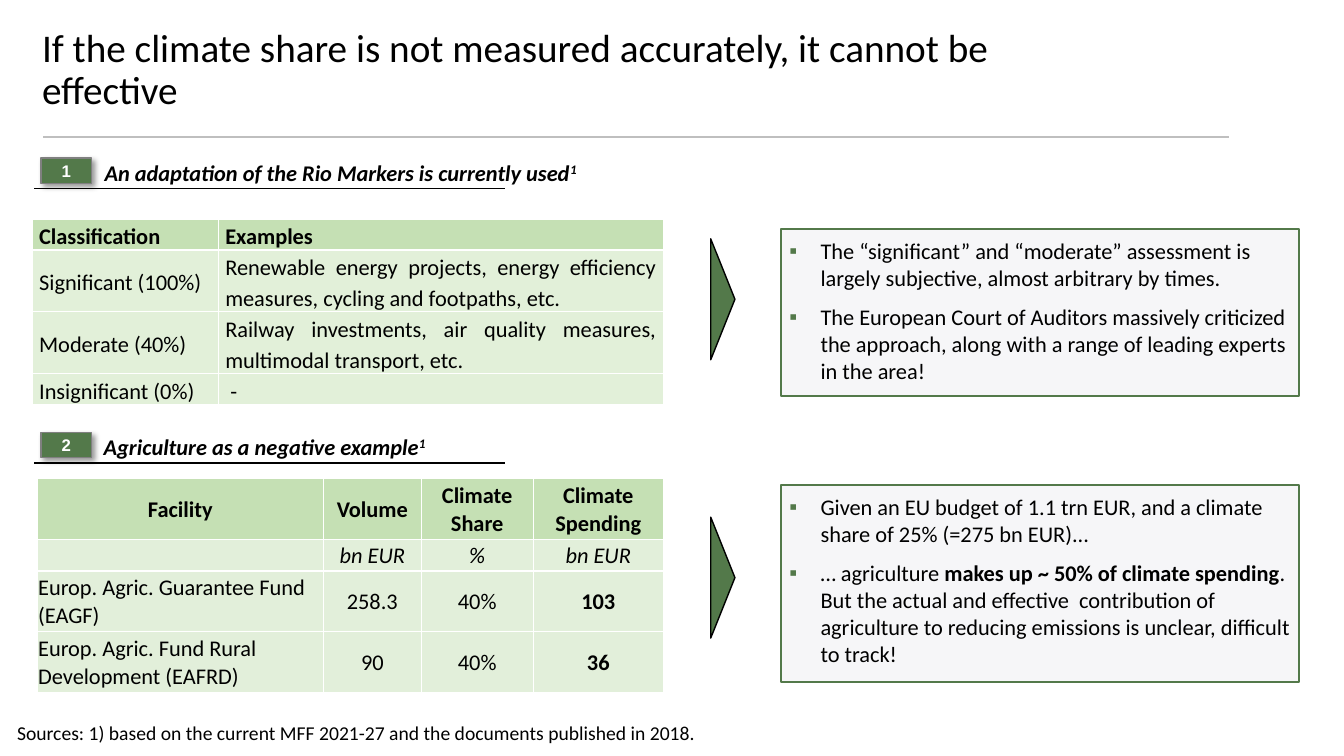
from lxml import etree
from pptx import Presentation
from pptx import util as u
from pptx.dml.color import RGBColor
from pptx.enum import shapes, text
from pptx.oxml import parse_xml
from pptx.oxml.ns import nsdecls, qn

Pt = u.Pt
ALIGN = text.PP_ALIGN
ANCHOR = text.MSO_ANCHOR
COLOURS = {
    "ink": "000000", "paper": "FFFFFF", "rule": "BFBFBF", "badge_edge": "808080",
    "green": "53794A", "panel": "F6F6F8", "header": "C5E0B4",
    "marker_row": "E2F0D9", "fund_row": "E2EFDA",
}


def rgb(name):
    return RGBColor.from_string(COLOURS[name])


def add_bullet(paragraph):
    properties = paragraph._p.get_or_add_pPr()
    properties.set("marL", str(Pt(22.3)))
    properties.set("indent", str(-Pt(22.3)))
    colour = etree.SubElement(properties, qn("a:buClr"))
    etree.SubElement(colour, qn("a:srgbClr"), val=COLOURS["green"])
    etree.SubElement(properties, qn("a:buFont"), typeface="Arial")
    etree.SubElement(properties, qn("a:buChar"), char="▪")


def write(frame, paragraphs, size=16, font="Calibri", colour="ink", bold=False,
          italic=False, align=ALIGN.LEFT, spacing=None, after=None, bullet=False):
    """Fill a text frame; a paragraph is a list of (text, emphasis) runs,
    where emphasis is "", "bold" or "super"."""
    for index, runs in enumerate(paragraphs):
        paragraph = frame.add_paragraph() if index else frame.paragraphs[0]
        if bullet:
            add_bullet(paragraph)
        paragraph.alignment = align
        if spacing:
            paragraph.line_spacing = spacing
        if after:
            paragraph.space_after = Pt(after)
        for words, emphasis in runs:
            run = paragraph.add_run()
            run.text = words
            run.font.size, run.font.name = Pt(size), font
            run.font.bold = bold or emphasis == "bold"
            run.font.italic = italic
            run.font.color.rgb = rgb(colour)
            if emphasis == "super":
                run.font._element.set("baseline", "30000")


def set_frame(frame, margins, anchor=ANCHOR.TOP, wrap=True):
    frame.word_wrap = wrap
    frame.vertical_anchor = anchor
    (frame.margin_left, frame.margin_top,
     frame.margin_right, frame.margin_bottom) = map(Pt, margins)


def add_text(slide, box, runs, margins=(7.2, 3.6, 7.2, 3.6), anchor=ANCHOR.MIDDLE,
             wrap=True, **style):
    frame = slide.shapes.add_textbox(*map(Pt, box)).text_frame
    set_frame(frame, margins, anchor, wrap)
    write(frame, [runs], **style)


def add_rule(slide, left, right, y, colour):
    rule = slide.shapes.add_connector(
        shapes.MSO_CONNECTOR.STRAIGHT, Pt(left), Pt(y), Pt(right), Pt(y))
    rule.line.color.rgb = rgb(colour)
    rule.line.width = Pt(1)
    etree.SubElement(rule._element.spPr, qn("a:effectLst"))


def add_block(slide, kind, box, fill, edge, edge_width=1):
    block = slide.shapes.add_shape(kind, *map(Pt, box))
    block.shadow.inherit = False
    block.fill.solid()
    block.fill.fore_color.rgb = rgb(fill)
    block.line.color.rgb = rgb(edge)
    block.line.width = Pt(edge_width)
    return block


def add_heading(slide, number, heading, top, width):
    """Numbered badge, heading with footnote mark, and underline."""
    add_text(slide, (64.8, top, width, 26.6), [(heading, ""), ("1", "super")],
             anchor=ANCHOR.TOP, wrap=False, bold=True, italic=True, align=ALIGN.CENTER)
    add_rule(slide, 24.5, 361, top + 24.6, "ink")
    badge = add_block(slide, shapes.MSO_SHAPE.RECTANGLE, (29.3, top + 3, 36, 18),
                      "green", "badge_edge")
    effects = badge._element.spPr.find(qn("a:effectLst"))
    effects.append(parse_xml(
        f'<a:outerShdw {nsdecls("a")} blurRad="{Pt(4)}" dist="{Pt(3)}" dir="2700000" '
        f'algn="tl" rotWithShape="0"><a:srgbClr val="{COLOURS["ink"]}">'
        '<a:alpha val="40000"/></a:srgbClr></a:outerShdw>'))
    set_frame(badge.text_frame, (0, 0, 0, 0), ANCHOR.MIDDLE)
    write(badge.text_frame, [[(number, "")]], size=12, font="Arial", colour="paper",
          bold=True, align=ALIGN.CENTER)


def add_pointer(slide, middle):
    length, depth = 86.4, 17.3
    box = (516.3 - length / 2, middle - depth / 2, length, depth)
    add_block(slide, shapes.MSO_SHAPE.ISOSCELES_TRIANGLE, box, "green", "ink").rotation = 90


def add_findings(slide, top, height, findings):
    panel = add_block(slide, shapes.MSO_SHAPE.RECTANGLE, (558, top, 370, height),
                      "panel", "green", 1.5)
    set_frame(panel.text_frame, (5.8,) * 4)
    write(panel.text_frame, findings, after=9, bullet=True)


def add_grid(slide, left, top, widths, heights, rows, row_fill, margins, style_of):
    """Table with a header row; style_of(row, column) gives a cell's text format."""
    table = slide.shapes.add_table(
        len(rows), len(widths), Pt(left), Pt(top), Pt(sum(widths)), Pt(sum(heights))).table
    for column, width in zip(table.columns, widths):
        column.width = Pt(width)
    for r, (row, height) in enumerate(zip(rows, heights)):
        table.rows[r].height = Pt(height)
        for c, words in enumerate(row):
            cell = table.cell(r, c)
            cell.fill.solid()
            cell.fill.fore_color.rgb = rgb(row_fill if r else "header")
            cell.vertical_anchor = ANCHOR.MIDDLE
            (cell.margin_left, cell.margin_top,
             cell.margin_right, cell.margin_bottom) = map(Pt, margins)
            write(cell.text_frame, [[(words, "")]], **style_of(r, c))


def marker_style(row, column):
    return {"bold": row == 0, "align": ALIGN.JUSTIFY, "spacing": 1.15}


def fund_style(row, column):
    is_name = row > 1 and column == 0
    return {"bold": row == 0 or (row > 1 and column == 3), "italic": row == 1,
            "align": ALIGN.LEFT if is_name else ALIGN.CENTER}


def main():
    deck = Presentation()
    deck.slide_width, deck.slide_height = Pt(960), Pt(540)
    slide = deck.slides.add_slide(deck.slide_layouts[6])

    add_rule(slide, 31, 877.7, 98, "rule")
    add_text(slide, (23, 10.8, 751, 79.2),
             [("If the climate share is not measured accurately, it cannot be effective", "")],
             size=28, spacing=0.9)

    add_heading(slide, "1", "An adaptation of the Rio Markers is currently used", 110, 357)
    markers = [
        ("Classification", "Examples"),
        ("Significant (100%)", "Renewable energy projects, energy efficiency measures, "
                               "cycling and footpaths, etc."),
        ("Moderate (40%)", "Railway investments, air quality measures, "
                           "multimodal transport, etc."),
        ("Insignificant (0%)", " -"),
    ]
    add_grid(slide, 23, 156.5, (133, 317.8), (22, 44, 44, 22), markers, "marker_row",
             (5, 0, 5, 0), marker_style)
    add_pointer(slide, 213.8)
    add_findings(slide, 163.5, 119.5, [
        [("The “significant” and “moderate” assessment is largely subjective, "
          "almost arbitrary by times.", "")],
        [("The European Court of Auditors massively criticized the approach, along with "
          "a range of leading experts in the area!", "")],
    ])

    add_heading(slide, "2", "Agriculture as a negative example", 306, 248.4)
    add_pointer(slide, 412.6)
    add_findings(slide, 346.3, 141.1, [
        [("Given an EU budget of 1.1 trn EUR, and a climate share of 25% "
          "(=275 bn EUR)...", "")],
        [("… agriculture ", ""), ("makes up ~ 50% of climate spending", "bold"),
         (". But the actual and effective  contribution of agriculture to reducing "
          "emissions is unclear, difficult to track!", "")],
    ])
    funds = [
        ("Facility", "Volume", "Climate Share", "Climate Spending"),
        ("", "bn EUR", "%", "bn EUR"),
        ("Europ. Agric. Guarantee Fund (EAGF)", "258.3", "40%", "103"),
        ("Europ. Agric. Fund Rural Development (EAFRD)", "90", "40%", "36"),
    ]
    add_grid(slide, 26.6, 342, (204.5, 69.8, 80, 93), (43.5, 22.3, 43.5, 43.5), funds,
             "fund_row", (0.7, 0.7, 0.7, 0), fund_style)

    add_text(slide, (12.2, 517.7, 936, 11.5),
             [("Sources: 1) based on the current MFF 2021-27 and the documents "
               "published in 2018.", "")],
             margins=(0, 0, 0, 0), size=14, after=9)
    deck.save("out.pptx")


if __name__ == "__main__":
    main()
